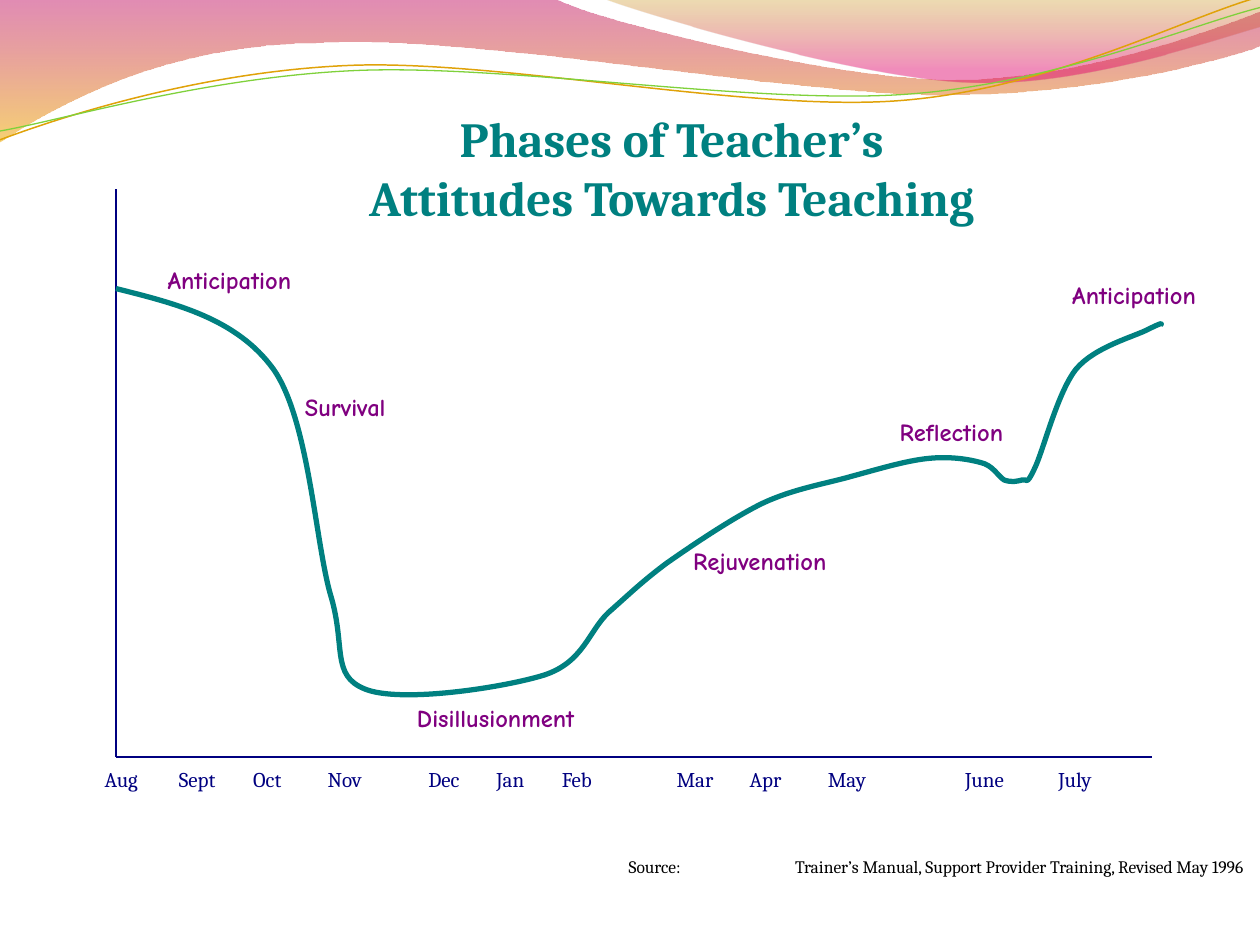
"""Builds a slide charting the phases of teachers' attitudes over a school year."""
from lxml import etree
from pptx import Presentation
from pptx.dml.color import RGBColor
from pptx.enum import shapes, text
from pptx.oxml.ns import qn
from pptx.util import Inches, Pt

COLORS = {"teal": "008080", "purple": "800080", "navy": "000080", "black": "000000",
          "rose": "BD0059", "amber": "F0AB00", "olive": "C38B00", "pink": "E1006B",
          "gold": "E0A209", "green": "7FD13B"}

prs = Presentation()
prs.slide_width, prs.slide_height = Inches(10), Inches(7.5)
s = prs.slides.add_slide(prs.slide_layouts[6])


def add_text(content, box, size, color, font="Cambria", bold=False, inset=0.5, pad=0,
             align=text.PP_ALIGN.LEFT, anchor=text.MSO_ANCHOR.TOP, tabs=()):
    tf = s.shapes.add_textbox(*map(Inches, box)).text_frame
    tf.word_wrap = True
    tf.vertical_anchor = anchor
    tf.margin_left = Inches(inset)
    tf.margin_top = tf.margin_bottom = Inches(pad / 2)
    tf.margin_right = Inches(pad)
    for i, line in enumerate(content.split("\n")):
        p = tf.add_paragraph() if i else tf.paragraphs[0]
        p.alignment = align
        r = p.add_run()
        r.text = line
        r.font.size, r.font.bold, r.font.name = Pt(size), bold, font
        r.font.color.rgb = RGBColor.from_string(COLORS[color])
        if tabs:
            tab_list = etree.SubElement(p._p.get_or_add_pPr(), qn("a:tabLst"))
            for x in tabs:
                etree.SubElement(tab_list, qn("a:tab"), pos=str(Inches(x)), algn="l")


def add_curve(kinds, points, line=None, gradient=None):
    pts = [(Inches(x), Inches(y)) for x, y in points]
    builder = s.shapes.build_freeform(*pts[0], scale=1.0)
    builder.add_line_segments(pts[1:], close=bool(gradient))
    sp = builder.convert_to_shape()
    sp.shadow.inherit = False
    outline = sp._element.find(".//" + qn("a:path"))
    segments = iter(outline.findall(qn("a:lnTo")))
    for kind in kinds:
        first = next(segments)
        if kind == "C":
            first.tag = qn("a:cubicBezTo")
            for _ in range(2):
                extra = next(segments)
                first.append(extra[0])
                outline.remove(extra)
    if line:
        sp.fill.background()
        sp.line.color.rgb = RGBColor.from_string(COLORS[line[0]])
        sp.line.width = Pt(line[1])
    else:
        sp.line.fill.background()
        sp.fill.gradient()
        grad = sp._element.spPr.find(qn("a:gradFill"))
        for child in list(grad):
            grad.remove(child)
        stops = etree.SubElement(grad, qn("a:gsLst"))
        for pos, color, alpha in gradient:
            gs = etree.SubElement(stops, qn("a:gs"), pos=str(pos * 1000))
            clr = etree.SubElement(gs, qn("a:srgbClr"), val=COLORS[color])
            etree.SubElement(clr, qn("a:alpha"), val=str(alpha * 1000))
        etree.SubElement(grad, qn("a:lin"), ang="5400000", scaled="0")


add_curve("LCCLCCCL", [
    (0, -0.01), (4.4, -0.01), (4.76, 0.17), (6.64, 0.63), (7.58, 0.63),
    (8.53, 0.63), (9.58, 0.26), (10, 0.09), (10.01, 0.36),
    (9.83, 0.44), (8.7, 0.76), (7.46, 0.75), (6.22, 0.75), (3.82, 0.28), (2.57, 0.34),
    (1.29, 0.35), (0.46, 0.83), (-0.01, 1.13), (0, -0.01)],
    gradient=[(0, "rose", 45), (100, "amber", 55)])
add_curve("CCLL", [
    (4.79, -0.01), (5.09, 0.11), (6.82, 0.62), (7.69, 0.65),
    (8.56, 0.69), (9.61, 0.32), (10, 0.21), (10, 0), (4.79, -0.01)],
    gradient=[(0, "olive", 30), (80, "pink", 45)])
add_curve("CCC", [
    (0, 1.11), (0.48, 0.93), (1.58, 0.57), (2.77, 0.52), (3.95, 0.47), (5.93, 0.89),
    (7.13, 0.8), (8.33, 0.71), (9.38, 0.15), (9.98, -0.02)], line=("gold", 0.85))
add_curve("CCC", [
    (0, 1.04), (0.47, 0.96), (1.64, 0.61), (2.83, 0.56), (4.03, 0.51), (5.97, 0.83),
    (7.17, 0.75), (8.36, 0.67), (9.41, 0.21), (10, 0.06)], line=("green", 0.75))

add_text("Phases of Teacher’s\nAttitudes Towards Teaching", (1.52, 0.82, 7.12, 1.02),
         28, "teal", bold=True, inset=0.6, pad=0.1,
         align=text.PP_ALIGN.CENTER, anchor=text.MSO_ANCHOR.MIDDLE)

for end in [(0.92, 1.5), (9.14, 6.01)]:
    axis = s.shapes.add_connector(shapes.MSO_CONNECTOR.STRAIGHT,
                                  *map(Inches, (0.92, 6.01) + end))
    axis.line.color.rgb = RGBColor.from_string(COLORS["navy"])
    axis.line.width = Pt(1)
    etree.SubElement(axis._element.spPr, qn("a:effectLst"))

attitude = [
    (0.92, 2.29), (1.4, 2.41), (1.88, 2.53), (2.17, 2.93), (2.45, 3.33), (2.5, 4.28),
    (2.62, 4.71), (2.75, 5.13), (2.62, 5.36), (2.9, 5.47), (3.18, 5.58), (3.98, 5.46),
    (4.31, 5.36), (4.63, 5.26), (4.67, 5.01), (4.83, 4.86), (5, 4.71), (5.09, 4.62),
    (5.29, 4.47), (5.49, 4.33), (5.8, 4.12), (6.04, 4), (6.29, 3.88), (6.55, 3.84),
    (6.76, 3.78), (6.98, 3.72), (7.18, 3.66), (7.35, 3.64), (7.52, 3.62), (7.67, 3.64),
    (7.78, 3.67), (7.88, 3.69), (7.92, 3.78), (7.97, 3.81), (8.03, 3.83), (8.07, 3.82),
    (8.11, 3.81), (8.15, 3.79), (8.14, 3.87), (8.21, 3.72), (8.28, 3.58), (8.39, 3.12),
    (8.54, 2.93), (8.69, 2.75), (9.01, 2.67), (9.12, 2.61), (9.24, 2.55), (9.22, 2.57),
    (9.21, 2.58)]
add_curve("C" * (len(attitude) // 3), attitude, line=("teal", 3))

for phase, box in [("Anticipation", (0.83, 2.1, 1.85, 0.24)),
                   ("Survival", (1.92, 3.11, 1.76, 0.31)),
                   ("Disillusionment", (2.81, 5.58, 1.86, 0.25)),
                   ("Rejuvenation", (5, 4.33, 1.82, 0.31)),
                   ("Reflection", (6.64, 3.31, 1.94, 0.28)),
                   ("Anticipation", (8.01, 2.22, 1.65, 0.19))]:
    add_text(phase, box, 14, "purple", font="Comic Neue", bold=True)

months = "Aug Sept Oct Nov Dec Jan Feb Mar Apr May June July".split()
add_text("\t".join(months), (0.33, 6.08, 9.17, 0.39), 12, "navy",
         tabs=(0.59, 1.18, 1.77, 2.57, 3.11, 3.63, 4.54, 5.12, 5.74, 6.83, 7.57))
add_text("Source:\tTrainer’s Manual, Support Provider Training, Revised May 1996",
         (4.49, 6.79, 5.5, 0.31), 10, "black", tabs=(1.32,))

prs.save("out.pptx")
